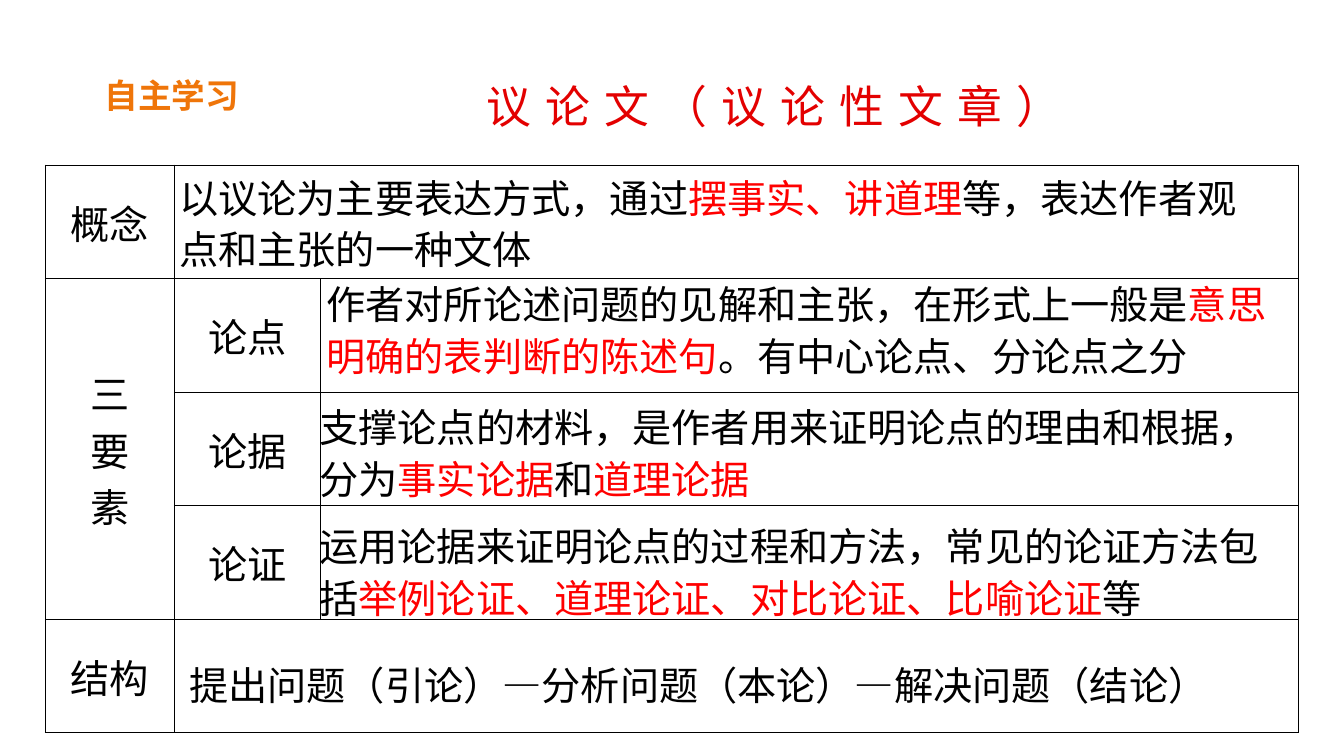
from lxml import etree
from pptx import Presentation
from pptx.dml.color import RGBColor as RGB
from pptx.enum.text import MSO_ANCHOR as Anchor, MSO_AUTO_SIZE as Auto, PP_ALIGN as Align
from pptx.oxml import parse_xml
from pptx.oxml.ns import nsdecls, qn
from pptx.util import Inches, Pt

FONT = "Noto Sans CJK SC"
HUES = {"ink": "000000", "key": "FF0000", "title": "E30000", "tag": "EF7509", "cell": "FFFFFF"}

# Content: runs marked "key" are highlighted
TITLE = [("议论文（议论性文章）", "title")]
TAG = [("自主学习", "tag")]
LABELS = {(0, 0): "概念", (1, 0): "三要素", (1, 1): "论点",
          (2, 1): "论据", (3, 1): "论证", (4, 0): "结构"}
MERGES = [((0, 1), (0, 2)), ((1, 0), (3, 0)), ((4, 1), (4, 2))]
NOTES = [
    ((1.68, 1.63, 11.06, 1.14), [
        ("以议论为主要表达方式，通过", "ink"), ("摆事实、讲道理", "key"),
        ("等，表达作者观点和主张的一种文体", "ink")]),
    ((3.14, 2.69, 9.74, 1.14), [
        ("作者对所论述问题的见解和主张，在形式上一般是", "ink"),
        ("意思明确的表判断的陈述句", "key"), ("。有中心论点、分论点之分", "ink")]),
    ((3.07, 3.91, 9.74, 1.14), [
        ("支撑论点的材料，是作者用来证明论点的理由和根据，分为", "ink"),
        ("事实论据", "key"), ("和", "ink"), ("道理论据", "key")]),
    ((3.07, 5.09, 9.74, 1.14), [
        ("运用论据来证明论点的过程和方法，常见的论证方法包括", "ink"),
        ("举例论证、道理论证、对比论证、比喻论证", "key"), ("等", "ink")]),
    ((1.78, 6.46, 10.94, 0.62), [
        ("提出问题（引论）—分析问题（本论）—解决问题（结论）", "ink")]),
]
COLS = [1.28, 1.45, 9.7]
ROWS, HIGH = 5, 1.126
PADS = {"margin_left": 0.13, "margin_right": 0.13, "margin_top": 0.07, "margin_bottom": 0.07}

deck = Presentation()
deck.slide_width, deck.slide_height = Inches(13.33), Inches(7.5)
slide = deck.slides.add_slide(deck.slide_layouts[6])


def write(para, runs, size=28, bold=False, gap=0):
    for text, hue in runs:
        run = para.add_run()
        run.text = text
        for name, value in {"size": Pt(size), "bold": bold, "name": FONT}.items():
            setattr(run.font, name, value)
        run.font.color.rgb = RGB.from_string(HUES[hue])
        props = run.font._element
        etree.SubElement(props, qn("a:ea")).set("typeface", FONT)
        if gap:
            props.set("spc", str(gap * 100))


def add_text(spot, runs, wrap=True, align=Align.LEFT, lead=1.0, **style):
    frame = slide.shapes.add_textbox(*map(Inches, spot)).text_frame
    frame.word_wrap = wrap
    frame.auto_size = Auto.SHAPE_TO_FIT_TEXT
    para = frame.paragraphs[0]
    para.alignment, para.line_spacing = align, lead
    write(para, runs, **style)


def style_cell(cell):
    cell.fill.solid()
    cell.fill.fore_color.rgb = RGB.from_string(HUES["cell"])
    props = cell._tc.get_or_add_tcPr()
    tint = props.find(".//" + qn("a:srgbClr"))
    etree.SubElement(tint, qn("a:alpha")).set("val", "75000")
    for i, side in enumerate(("lnL", "lnR", "lnT", "lnB")):
        props.insert(i, parse_xml(
            f'<a:{side} {nsdecls("a")} w="12700"><a:solidFill>'
            f'<a:srgbClr val="{HUES["ink"]}"/></a:solidFill></a:{side}>'))


# Title
add_text((4.41, 0.73, 6.53, 0.64), TITLE, align=Align.CENTER, size=32, gap=10)

# Table grid
table = slide.shapes.add_table(ROWS, len(COLS), Inches(0.45), Inches(1.64),
                               Inches(sum(COLS)), Inches(ROWS * HIGH)).table
table.first_row = table.horz_banding = False
for col, width in zip(table.columns, COLS):
    col.width = Inches(width)
for row in table.rows:
    row.height = Inches(HIGH)
    for cell in row.cells:
        style_cell(cell)
for start, end in MERGES:
    table.cell(*start).merge(table.cell(*end))

# Row labels: the tall cell takes one character a line
for spot, label in LABELS.items():
    cell = table.cell(*spot)
    cell.vertical_anchor = Anchor.MIDDLE
    for name, value in PADS.items():
        setattr(cell, name, Inches(value))
    frame = cell.text_frame
    lines = list(label) if cell.span_height > 1 else [label]
    for i, line in enumerate(lines):
        para = frame.add_paragraph() if i else frame.paragraphs[0]
        para.alignment = Align.CENTER
        write(para, [(line, "ink")])

# Explanations over the table
for spot, runs in NOTES:
    add_text(spot, runs, lead=1.1)

# Section tag
add_text((0.94, 0.69, 1.54, 0.5), TAG, wrap=False, size=24, bold=True)

deck.save("out.pptx")
